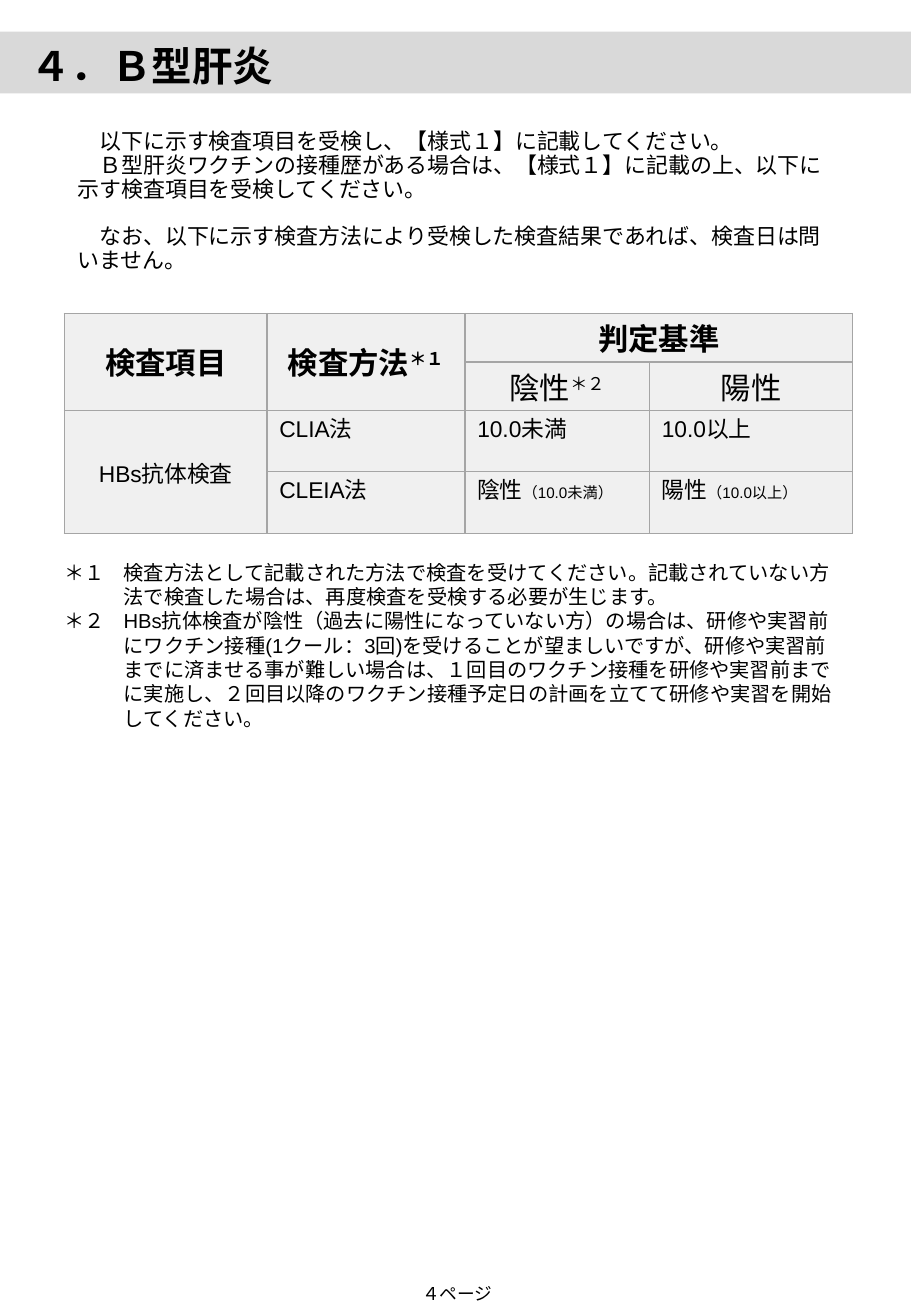
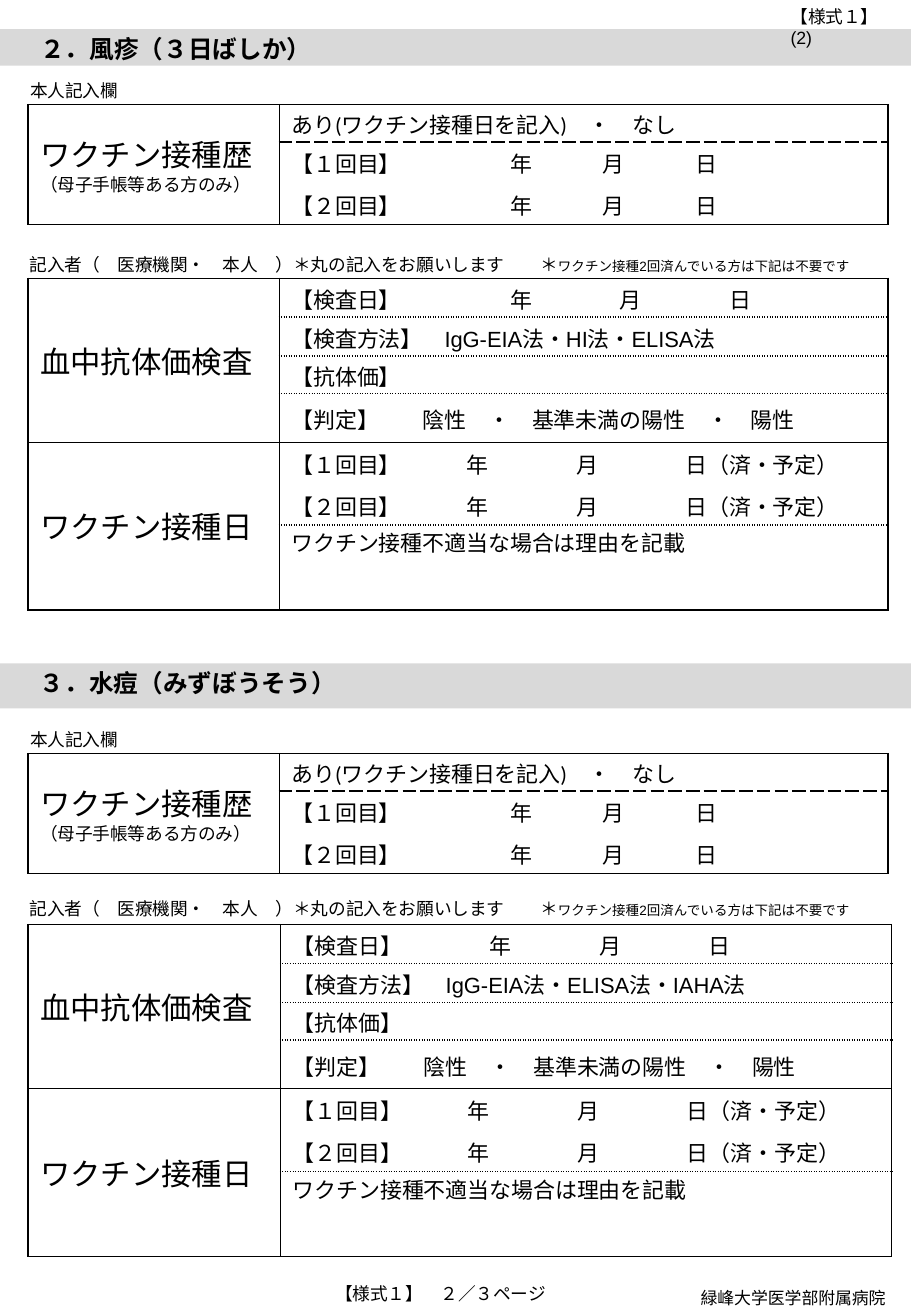
from dataclasses import dataclass

from lxml.etree import SubElement
from pptx import Presentation
from pptx.dml.color import RGBColor
from pptx.enum.shapes import MSO_SHAPE
from pptx.enum.text import MSO_ANCHOR, MSO_AUTO_SIZE, PP_ALIGN
from pptx.oxml import parse_xml
from pptx.oxml.ns import nsdecls, qn
from pptx.util import Inches, Pt

BLACK = RGBColor(0x00, 0x00, 0x00)
BAND = RGBColor(0xD9, 0xD9, 0xD9)
CELL = RGBColor(0xF0, 0xF0, 0xF0)
RULE = RGBColor(0xA5, 0xA5, 0xA5)
SANS = "Arial"
LABEL = "Calibri"
SUPERSCRIPT = "30000"
BLANK = "　"


@dataclass
class Line:
    text: str
    size: float = 13
    font: str = SANS
    bold: bool = False
    align: PP_ALIGN = PP_ALIGN.LEFT
    blanks: tuple = ()
    hang: float = 0
    before: float = 0
    spacing: float = 1.0
    tail: str = ""
    tail_size: float = 0


def write(frame, lines, anchor=MSO_ANCHOR.TOP):
    frame.word_wrap = True
    frame.auto_size = MSO_AUTO_SIZE.NONE
    frame.vertical_anchor = anchor
    for index, line in enumerate(lines):
        paragraph = frame.paragraphs[0] if index == 0 else frame.add_paragraph()
        write_line(paragraph, line)


def write_line(paragraph, line):
    paragraph.alignment = line.align
    paragraph.line_spacing = line.spacing
    paragraph.space_before = Pt(line.before)
    properties = paragraph._p.get_or_add_pPr()
    properties.set("marL", str(Inches(line.hang)))
    properties.set("indent", str(-Inches(line.hang)))
    SubElement(properties, qn("a:buNone"))
    paragraph.font.size = Pt(line.size)
    paragraph.font.name = line.font
    paragraph.font.bold = line.bold
    paragraph.font.color.rgb = BLACK
    SubElement(paragraph.font._element, qn("a:ea"), typeface=line.font)
    add_runs(paragraph, line)
    if line.tail:
        tail = paragraph.add_run()
        tail.text = line.tail
        if line.tail_size:
            tail.font.size = Pt(line.tail_size)
        else:
            tail.font._element.set("baseline", SUPERSCRIPT)


def add_runs(paragraph, line):
    first, *others = line.text.split("|")
    paragraph.add_run().text = first
    for extra, part in zip(line.blanks, others):
        blank = paragraph.add_run()
        blank.text = BLANK
        blank.font._element.set("spc", str(round(extra * 100)))
        paragraph.add_run().text = part


def add_text(slide, box, *lines):
    write(slide.shapes.add_textbox(*map(Inches, box)).text_frame, lines)


def fill_placeholder(placeholder, box, lines, anchor=MSO_ANCHOR.TOP):
    left, top, width, height = map(Inches, box)
    placeholder.left, placeholder.top = left, top
    placeholder.width, placeholder.height = width, height
    write(placeholder.text_frame, lines, anchor)


def add_band(slide, left, top, height):
    band = slide.shapes.add_shape(
        MSO_SHAPE.RECTANGLE, Inches(left), Inches(top), Inches(7.92), Inches(height))
    band.shadow.inherit = False
    band.fill.solid()
    band.fill.fore_color.rgb = BAND
    band.line.fill.background()
    slide.shapes._spTree.insert(2, band._element)


def set_borders(cell, color, top="solid", bottom="solid", top_width=1):
    properties = cell._tc.get_or_add_tcPr()
    edges = (("lnL", "solid", 1), ("lnR", "solid", 1),
             ("lnT", top, top_width), ("lnB", bottom, 1))
    for index, (edge, dash, width) in enumerate(edges):
        properties.insert(index, parse_xml(
            f'<a:{edge} {nsdecls("a")} w="{Pt(width)}"><a:solidFill>'
            f'<a:srgbClr val="{color}"/></a:solidFill>'
            f'<a:prstDash val="{dash}"/></a:{edge}>'))


def new_table(slide, left, top, columns, rows):
    table = slide.shapes.add_table(
        len(rows), len(columns), Inches(left), Inches(top),
        Inches(sum(columns)), Inches(sum(rows))).table
    table.first_row = table.horz_banding = False
    for column, width in zip(table.columns, columns):
        column.width = Inches(width)
    for row, row_height in zip(table.rows, rows):
        row.height = Inches(row_height)
    for cell in table.iter_cells():
        cell.margin_top = Inches(0.04)
        cell.margin_bottom = 0
    return table


def write_cell(cell, anchor, *lines):
    write(cell.text_frame, lines)
    cell.vertical_anchor = anchor
    cell.margin_top = Inches(0.04 if lines[0].size == 18 else 0.05)


def add_criteria_table(slide):
    table = new_table(slide, 0.53, 2.58, [1.67, 1.63, 1.52, 1.67],
                      [0.4, 0.4, 0.5, 0.51])
    for cell in table.iter_cells():
        set_borders(cell, RULE)
        cell.fill.solid()
        cell.fill.fore_color.rgb = CELL
    for first, last in [((0, 0), (1, 0)), ((0, 1), (1, 1)),
                        ((0, 2), (0, 3)), ((2, 0), (3, 0))]:
        table.cell(*first).merge(table.cell(*last))

    headers = [(0, 0, "検査項目", "", True), (0, 1, "検査方法", "＊１", True),
               (0, 2, "判定基準", "", True), (1, 2, "陰性", "＊２", False),
               (1, 3, "陽性", "", False)]
    for row, column, text, mark, bold in headers:
        write_cell(table.cell(row, column), MSO_ANCHOR.MIDDLE,
                   Line(text, 18, LABEL, bold, PP_ALIGN.CENTER, tail=mark))
    write_cell(table.cell(2, 0), MSO_ANCHOR.MIDDLE,
               Line("HBs抗体検査", 13.5, align=PP_ALIGN.CENTER))
    results = [[("CLIA法", ""), ("10.0未満", ""), ("10.0以上", "")],
               [("CLEIA法", ""), ("陰性", "（10.0未満）"), ("陽性", "（10.0以上）")]]
    for row, entries in enumerate(results, 2):
        for column, (text, note) in enumerate(entries, 1):
            write_cell(table.cell(row, column), MSO_ANCHOR.TOP,
                       Line(text, 13.5, tail=note, tail_size=9))


def add_form_table(slide, top, columns, rows, groups, dash, top_width=1):
    table = new_table(slide, 0.23, top, columns, rows)
    start = 0
    for label, entries in groups:
        last = len(entries) - 1
        for index, lines in enumerate(entries):
            row = start + index
            width = top_width if row == 0 else 1
            label_cell, entry_cell = table.cell(row, 0), table.cell(row, 1)
            set_borders(label_cell, BLACK, top_width=width)
            set_borders(entry_cell, BLACK, dash if index else "solid",
                        dash if index < last else "solid", width)
            label_cell.fill.background()
            entry_cell.fill.background()
            is_reason = row == len(rows) - 1 and len(groups) > 1
            write_cell(entry_cell, MSO_ANCHOR.TOP if is_reason else MSO_ANCHOR.MIDDLE,
                       *lines)
        table.cell(start, 0).merge(table.cell(start + last, 0))
        write_cell(table.cell(start, 0), MSO_ANCHOR.MIDDLE, *label)
        start += len(entries)


def doses(ending, blanks):
    return [Line(f"【{number}回目】|年|月|{ending}", font=LABEL, blanks=blanks, before=gap)
            for number, gap in (("１", 0), ("２", 9))]


def add_history_table(slide, top):
    label = [Line("ワクチン接種歴", 18, LABEL),
             Line("（母子手帳等ある方のみ）", 10.5, LABEL)]
    entries = [[Line("あり(ワクチン接種日を記入)　・　なし", font=LABEL)],
               doses("日", (52, 29, 29))]
    add_form_table(slide, top, [2.07, 5.01], [0.31, 0.68],
                   [(label, entries)], "dash", 0.75)


def add_antibody_table(slide, top, columns, methods, date_blanks):
    tests = [[Line("【検査日】|年|月|日", blanks=date_blanks)],
             [Line(f"【検査方法】　{methods}")],
             [Line("【抗体価】")],
             [Line("【判定】|陰性　・　基準未満の陽性　・　陽性", blanks=(13,))]]
    shots = [doses("日（済・予定）", (26, 39, 39)),
             [Line("ワクチン接種不適当な場合は理由を記載", font=LABEL)]]
    add_form_table(slide, top, columns, [0.32, 0.32, 0.31, 0.4, 0.68, 0.7],
                   [([Line("血中抗体価検査", 18, LABEL)], tests),
                    ([Line("ワクチン接種日", 18, LABEL)], shots)], "sysDot")


def add_form_section(slide, own_top, history_top, writer_top, antibody):
    add_text(slide, (0.15, own_top, 1.17, 0.29), Line("本人記入欄", 10.5))
    add_history_table(slide, history_top)
    add_text(slide, (0, writer_top, 7.35, 0.28),
             Line("　記入者（　医療機関・　本人　）＊丸の記入をお願いします|＊", 10.5,
                  blanks=(10.5,), tail="ワクチン接種2回済んでいる方は下記は不要です",
                  tail_size=8))
    add_antibody_table(slide, *antibody)


def add_footer(slide, text, align):
    add_text(slide, (2.66, 10.51, 2.21, 0.28), Line(text, 10.5, align=align))


def build_hepatitis(presentation):
    slide = presentation.slides.add_slide(presentation.slide_layouts[1])
    add_band(slide, -0.19, 0.26, 0.51)
    fill_placeholder(slide.shapes.title, (0.15, 0.29, 5.76, 0.5),
                     [Line("４．Ｂ型肝炎", 24, bold=True)])
    intro = [("　以下に示す検査項目を受検し、【様式１】に記載してください。", 0),
             ("　Ｂ型肝炎ワクチンの接種歴がある場合は、【様式１】に記載の上、以下に示す検査項目を受検してください。", 0),
             ("　なお、以下に示す検査方法により受検した検査結果であれば、検査日は問いません。", 14)]
    fill_placeholder(slide.placeholders[1], (0.54, 0.74, 6.47, 1.84),
                     [Line(text, before=gap, spacing=0.9) for text, gap in intro],
                     MSO_ANCHOR.MIDDLE)
    add_criteria_table(slide)
    notes = ["＊１\t検査方法として記載された方法で検査を受けてください。記載されていない方法で検査した場合は、再度検査を受検する必要が生じます。",
             "＊２\tHBs抗体検査が陰性（過去に陽性になっていない方）の場合は、研修や実習前にワクチン接種(1クール：3回)を受けることが望ましいですが、研修や実習前までに済ませる事が難しい場合は、１回目のワクチン接種を研修や実習前までに実施し、２回目以降のワクチン接種予定日の計画を立てて研修や実習を開始してください。"]
    add_text(slide, (0.43, 4.56, 6.57, 1.51),
             *[Line(note, 12, hang=0.49) for note in notes])
    add_footer(slide, "４ページ", PP_ALIGN.CENTER)


def build_form(presentation):
    slide = presentation.slides.add_slide(presentation.slide_layouts[5])
    add_band(slide, -0.05, 0.24, 0.3)
    add_band(slide, -0.1, 5.46, 0.37)
    fill_placeholder(slide.shapes.title, (0.23, 0.23, 5.76, 0.35),
                     [Line("２．風疹（３日ばしか）", 14.6, bold=True)])
    add_text(slide, (0.23, 5.45, 5.76, 0.35),
             Line("３．水痘（みずぼうそう）", 14.6, bold=True))
    add_text(slide, (6.41, 0, 1.05, 0.28), Line("【様式１】(2)", 10.5))
    add_form_section(slide, 0.61, 0.86, 2.04,
                     (2.29, [2.07, 5.01], "IgG-EIA法・HI法・ELISA法", (52, 39, 39)))
    add_form_section(slide, 5.95, 6.2, 7.34,
                     (7.61, [2.08, 5.03], "IgG-EIA法・ELISA法・IAHA法", (39, 39, 39)))
    add_footer(slide, "【様式１】　２／３ページ", PP_ALIGN.LEFT)
    add_text(slide, (5.67, 10.55, 1.74, 0.27),
             Line("緑峰大学医学部附属病院", 10, LABEL))


def main():
    presentation = Presentation()
    presentation.slide_width = Inches(7.5)
    presentation.slide_height = Inches(10.83)
    build_hepatitis(presentation)
    build_form(presentation)
    presentation.save("out.pptx")


if __name__ == "__main__":
    main()
